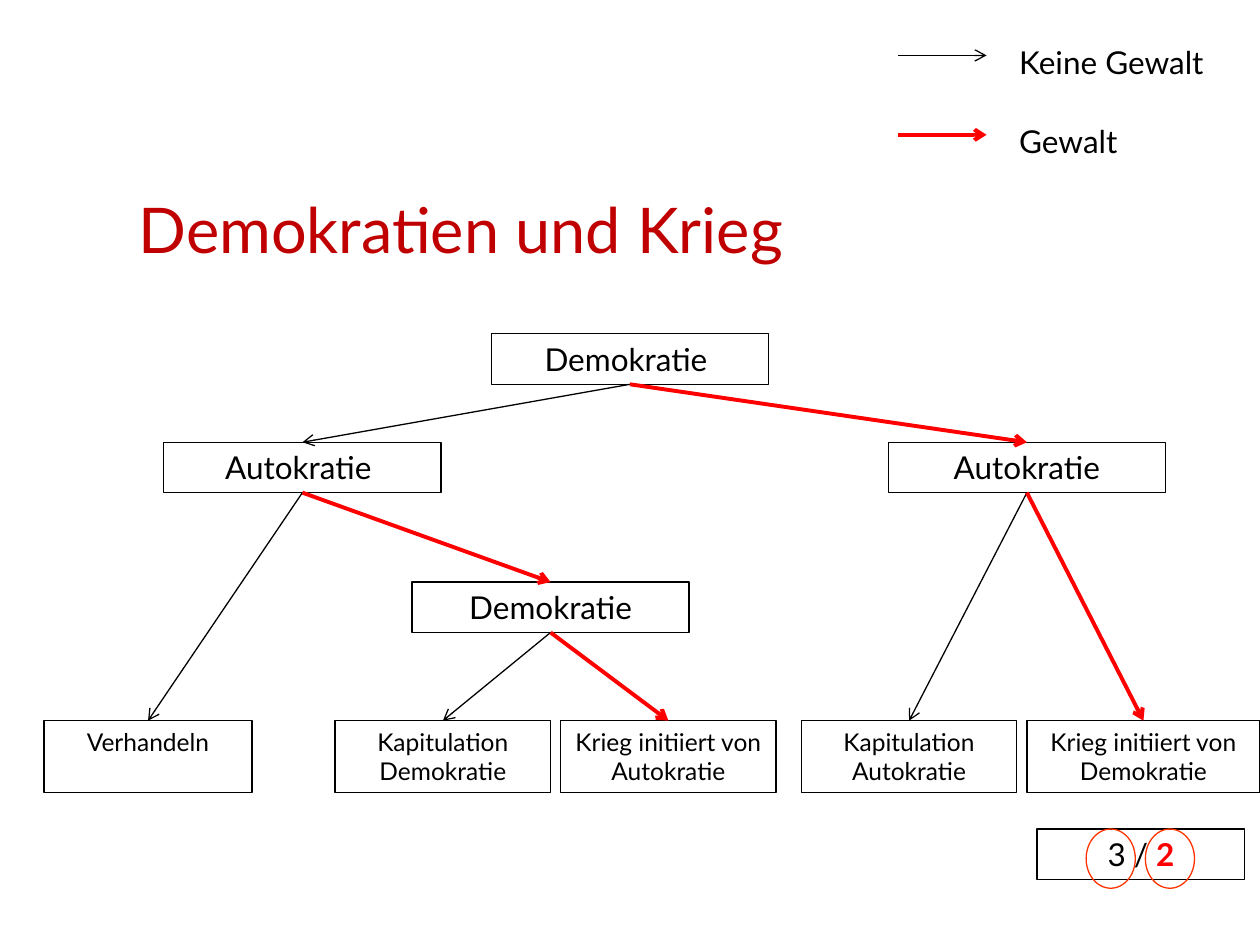
from pptx import Presentation
from pptx.dml.color import RGBColor
from pptx.enum.shapes import MSO_CONNECTOR, MSO_SHAPE
from pptx.enum.text import MSO_ANCHOR, PP_ALIGN
from pptx.oxml.ns import qn
from pptx.util import Inches, Pt
from lxml import etree

RECTANGLE, OVAL = MSO_SHAPE.RECTANGLE, MSO_SHAPE.OVAL
STRAIGHT = MSO_CONNECTOR.STRAIGHT
TOP, BOTTOM = MSO_ANCHOR.TOP, MSO_ANCHOR.BOTTOM
LEFT, CENTER = PP_ALIGN.LEFT, PP_ALIGN.CENTER
BOTTOM_SITE, TOP_SITE = 2, 0

THEME = {
    "font": "Lato", "title_size": 36, "actor_size": 18, "outcome_size": 14,
    "title": RGBColor(0xC0, 0, 0), "text": RGBColor(0, 0, 0),
    "force": RGBColor(0xFF, 0, 0), "ring": RGBColor(0xFF, 0x33, 0),
    "thin": 0.75, "thick": 2.25,
}

TITLE = "Demokratien und Krieg"
LEGEND = [("Keine Gewalt", False), ("Gewalt", True)]
ACTORS = {
    "start": ("Demokratie ", 3.9, 2.65),
    "peaceful reply": ("Autokratie ", 1.3, 3.51),
    "attacked reply": ("Autokratie", 7.05, 3.51),
    "second move": ("Demokratie", 3.27, 4.62),
}
OUTCOMES = {
    "talks": ("Verhandeln", 0.35, 1.65),
    "democracy yields": ("Kapitulation Demokratie", 2.66, 1.71),
    "autocratic war": ("Krieg initiiert von Autokratie", 4.45, 1.71),
    "autocracy yields": ("Kapitulation Autokratie", 6.36, 1.71),
    "democratic war": ("Krieg initiiert von Demokratie", 8.15, 1.85),
}
MOVES = [
    ("start", "peaceful reply", "attacked reply"),
    ("peaceful reply", "talks", "second move"),
    ("second move", "democracy yields", "autocratic war"),
    ("attacked reply", "autocracy yields", "democratic war"),
]
SCORE = ("3 / ", "2")

ACTOR_WIDTH, ACTOR_HEIGHT = 2.2, 0.4
OUTCOME_TOP, OUTCOME_HEIGHT = 5.72, 0.57
SCORE_BOX = (8.23, 6.58, 1.65, 0.4)
RING_LEFTS, RING_TOP, RING_SIZE = (8.62, 9.09), 6.58, (0.39, 0.47)
LEGEND_TOP, LEGEND_STEP = 0.29, 0.63
LEGEND_ARROW = (7.13, 7.83)


def style(font, size, color):
    font.name, font.size = THEME["font"], Pt(size)
    font.color.rgb = color


def write(shape, text, size, color=THEME["text"], align=LEFT, anchor=TOP):
    frame = shape.text_frame
    frame.text = text
    frame.word_wrap = True
    frame.vertical_anchor = anchor
    paragraph = frame.paragraphs[0]
    paragraph.alignment = align
    style(paragraph.runs[0].font, size, color)
    return paragraph


def add_outline(slide, kind, place, color):
    shape = slide.shapes.add_shape(kind, *map(Inches, place))
    shape.shadow.inherit = False
    shape.fill.background()
    shape.line.color.rgb = color
    shape.line.width = Pt(THEME["thin"])
    return shape


def add_box(slide, text, place, size):
    box = add_outline(slide, RECTANGLE, place, THEME["text"])
    write(box, text, size, align=CENTER)
    return box


def add_arrow(slide, force, start=(0, 0), end=(0, 0)):
    arrow = slide.shapes.add_connector(STRAIGHT, *map(Inches, start + end))
    arrow.line.color.rgb = THEME["force" if force else "text"]
    arrow.line.width = Pt(THEME["thick" if force else "thin"])
    etree.SubElement(arrow.line._get_or_add_ln(), qn("a:tailEnd"), type="arrow")
    etree.SubElement(arrow._element.spPr, qn("a:effectLst"))
    return arrow


def main():
    deck = Presentation()
    deck.slide_width, deck.slide_height = Inches(10), Inches(7.5)
    slide = deck.slides.add_slide(deck.slide_layouts[5])

    title = slide.shapes.title
    title.left, title.top, title.width, title.height = map(Inches, (1, 0.91, 8, 1.25))
    write(title, TITLE, THEME["title_size"], THEME["title"], anchor=BOTTOM)

    nodes = {}
    for key, (text, left, top) in ACTORS.items():
        place = (left, top, ACTOR_WIDTH, ACTOR_HEIGHT)
        nodes[key] = add_box(slide, text, place, THEME["actor_size"])
    for key, (text, left, width) in OUTCOMES.items():
        place = (left, OUTCOME_TOP, width, OUTCOME_HEIGHT)
        nodes[key] = add_box(slide, text, place, THEME["outcome_size"])

    for actor, *replies in MOVES:
        for force, reply in zip((False, True), replies):
            arrow = add_arrow(slide, force)
            arrow.begin_connect(nodes[actor], BOTTOM_SITE)
            arrow.end_connect(nodes[reply], TOP_SITE)

    for row, (label, force) in enumerate(LEGEND):
        top = LEGEND_TOP + row * LEGEND_STEP
        start, end = ((x, top + 0.15) for x in LEGEND_ARROW)
        add_arrow(slide, force, start, end)
        caption = slide.shapes.add_textbox(*map(Inches, (7.99, top, 1.89, 0.4)))
        write(caption, label, THEME["actor_size"])

    peaceful, violent = SCORE
    score = add_box(slide, peaceful, SCORE_BOX, THEME["actor_size"])
    violent_run = score.text_frame.paragraphs[0].add_run()
    violent_run.text = violent
    style(violent_run.font, THEME["actor_size"], THEME["force"])
    violent_run.font.bold = True
    for left in RING_LEFTS:
        add_outline(slide, OVAL, (left, RING_TOP, *RING_SIZE), THEME["ring"])

    deck.save("out.pptx")


if __name__ == "__main__":
    main()
